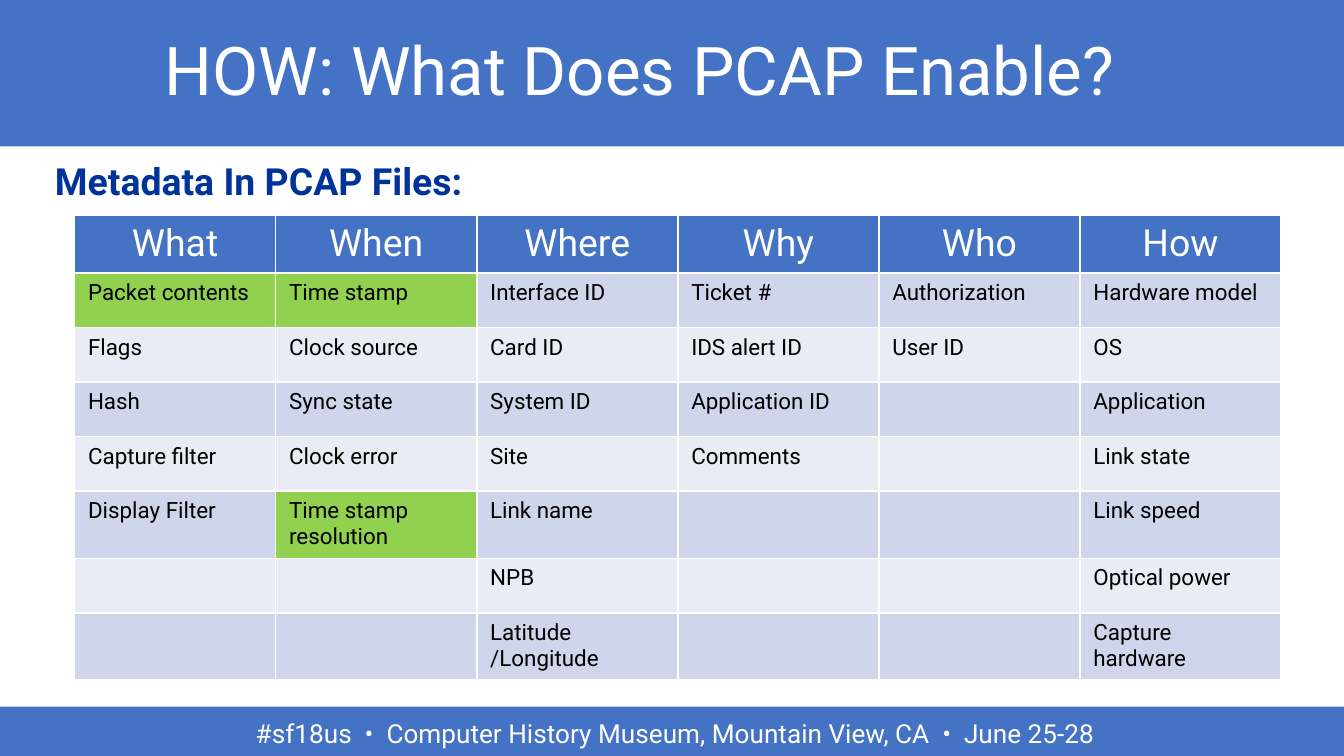
from typing import NamedTuple

import pptx
import pptx.dml.color
import pptx.enum.shapes
import pptx.enum.text
import pptx.util

Cm = pptx.util.Cm
Pt = pptx.util.Pt
RGBColor = pptx.dml.color.RGBColor
Align = pptx.enum.text.PP_ALIGN
Anchor = pptx.enum.text.MSO_ANCHOR

FONT = "Roboto"
BLUE = RGBColor(0x44, 0x72, 0xC4)
NAVY = RGBColor(0x00, 0x33, 0x99)
GREEN = RGBColor(0x92, 0xD0, 0x50)
BAND_DARK = RGBColor(0xCF, 0xD5, 0xEA)
BAND_LIGHT = RGBColor(0xE9, 0xEB, 0xF5)
WHITE = RGBColor(0xFF, 0xFF, 0xFF)
BLACK = RGBColor(0x00, 0x00, 0x00)


class Box(NamedTuple):
    """Left, top, width and height in centimetres."""
    left: float
    top: float
    width: float
    height: float

    def lengths(self) -> tuple:
        return tuple(Cm(v) for v in self)


class Column(NamedTuple):
    heading: str
    entries: tuple[str, ...]


HEADER_BAR = Box(0, 0, 25.4, 2.77)
FOOTER_BAR = Box(0, 13.36, 25.4, 0.93)
TITLE = Box(2.59, 0.03, 19, 2.72)
SUBTITLE = Box(0.79, 2.87, 24, 1.12)
FOOTER = Box(1.27, 13.44, 22.99, 0.85)
TABLE = Box(1.41, 4.06, 22.8, 8.24)

COLUMNS = [
    Column("What", ("Packet contents", "Flags", "Hash", "Capture filter", "Display Filter")),
    Column("When", ("Time stamp", "Clock source", "Sync state", "Clock error",
                    "Time stamp resolution")),
    Column("Where", ("Interface ID", "Card ID", "System ID", "Site", "Link name", "NPB",
                     "Latitude /Longitude")),
    Column("Why", ("Ticket #", "IDS alert ID", "Application ID", "Comments")),
    Column("Who", ("Authorization", "User ID")),
    Column("How", ("Hardware model", "OS", "Application", "Link state", "Link speed",
                   "Optical power", "Capture hardware")),
]
HIGHLIGHTS = {"Packet contents", "Time stamp", "Time stamp resolution"}


def write(tf, text: str, *, size: float, color: RGBColor, bold: bool = False,
          align: Align = Align.LEFT, line_spacing: float = 1.0) -> None:
    tf.word_wrap = True
    p = tf.paragraphs[0]
    p.alignment = align
    p.line_spacing = line_spacing
    r = p.add_run()
    r.text = text
    r.font.name = FONT
    r.font.size = Pt(size)
    r.font.bold = bold
    r.font.color.rgb = color


def add_bar(s, box: Box) -> None:
    sp = s.shapes.add_shape(pptx.enum.shapes.MSO_SHAPE.RECTANGLE, *box.lengths())
    sp.shadow.inherit = False
    sp.fill.solid()
    sp.fill.fore_color.rgb = BLUE
    sp.line.fill.background()


def add_label(s, box: Box, text: str, **text_format) -> None:
    sp = s.shapes.add_textbox(*box.lengths())
    write(sp.text_frame, text, **text_format)


def place_title(s, text: str) -> None:
    """Format the title placeholder and bring it in front of the header bar."""
    sp = s.shapes.title
    sp.left, sp.top, sp.width, sp.height = TITLE.lengths()
    tf = sp.text_frame
    tf.margin_left = tf.margin_right = tf.margin_top = tf.margin_bottom = Cm(0.25)
    tf.vertical_anchor = Anchor.MIDDLE
    write(tf, text, size=36, color=WHITE, align=Align.CENTER, line_spacing=0.9)
    sp.element.getparent().append(sp.element)


def fill_cell(cell, color: RGBColor) -> None:
    cell.fill.solid()
    cell.fill.fore_color.rgb = color


def add_metadata_table(s, columns: list[Column]) -> None:
    n_rows = 1 + max(len(column.entries) for column in columns)
    table = s.shapes.add_table(n_rows, len(columns), *TABLE.lengths()).table
    for row in table.rows:
        row.height = Cm(1.03)
    for c, column in enumerate(columns):
        heading = table.cell(0, c)
        fill_cell(heading, BLUE)
        write(heading.text_frame, column.heading, size=20, color=WHITE, align=Align.CENTER)
        for r in range(1, n_rows):
            cell = table.cell(r, c)
            text = column.entries[r - 1] if r <= len(column.entries) else ""
            band = BAND_DARK if r % 2 else BAND_LIGHT
            fill_cell(cell, GREEN if text in HIGHLIGHTS else band)
            if text:
                write(cell.text_frame, text, size=12, color=BLACK)


def main() -> None:
    prs = pptx.Presentation()
    prs.slide_width, prs.slide_height = Cm(25.4), Cm(14.29)
    s = prs.slides.add_slide(prs.slide_layouts[5])
    for bar in (HEADER_BAR, FOOTER_BAR):
        add_bar(s, bar)
    add_label(s, FOOTER, "#sf18us  •  Computer History Museum, Mountain View, CA  •  June 25-28",
              size=14, color=WHITE, align=Align.CENTER)
    place_title(s, "HOW: What Does PCAP Enable?")
    add_label(s, SUBTITLE, "Metadata In PCAP Files:", size=20, color=NAVY, bold=True)
    add_metadata_table(s, COLUMNS)
    prs.save("out.pptx")


if __name__ == "__main__":
    main()
